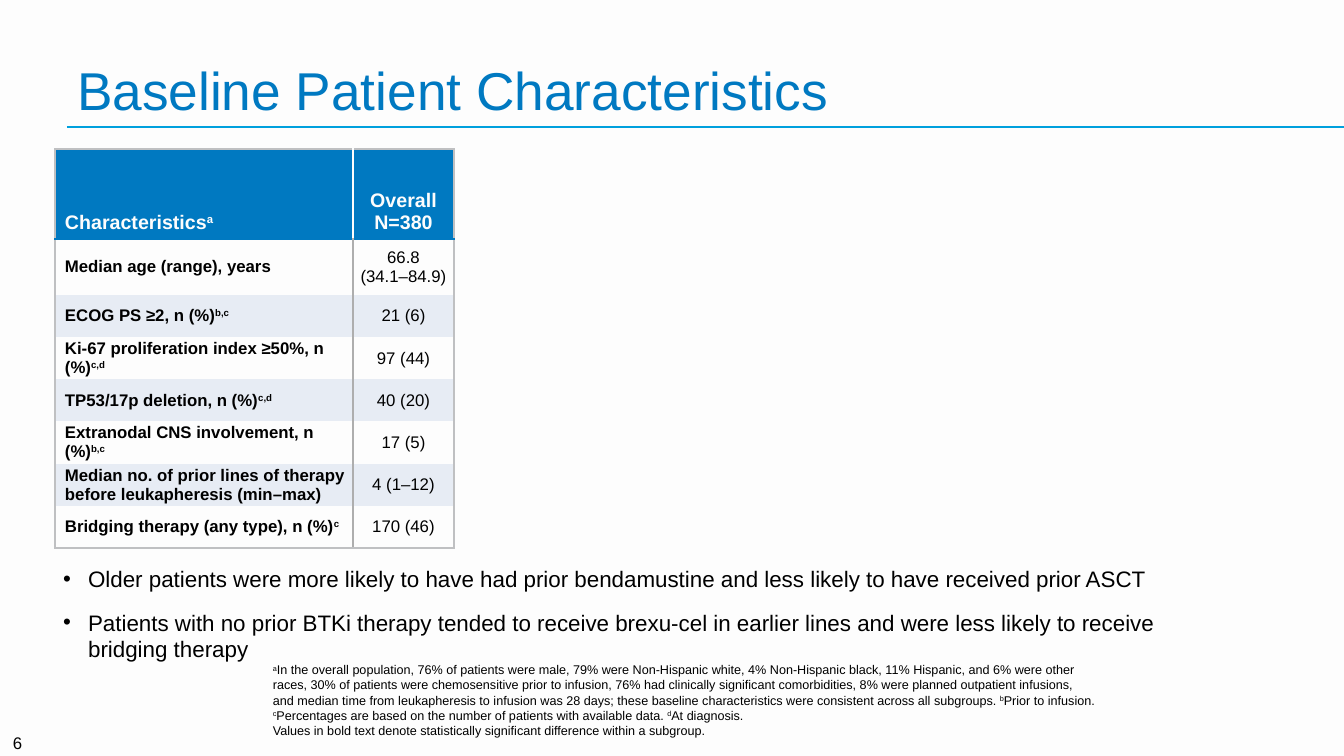
import lxml.etree
import pptx
import pptx.dml.color
import pptx.enum.shapes
import pptx.enum.text
import pptx.oxml.ns
import pptx.util

ANCHOR = pptx.enum.text.MSO_ANCHOR
ALIGN = pptx.enum.text.PP_ALIGN


def px(length):
    return pptx.util.Emu(round(length * 914400 / 100.8))


def color(value):
    return pptx.dml.color.RGBColor.from_string(value)


def add_element(parent, tag, **attributes):
    return lxml.etree.SubElement(parent, pptx.oxml.ns.qn(tag), **attributes)


class SlideBuilder:
    font = "Arial"
    blue = "0079C1"
    rule_blue = "00A0DD"
    black = "000000"
    white = "FDFDFD"
    band = "E7ECF4"
    outer_border = "BFC0C2"
    inner_border = "AEAEAE"

    def __init__(self, presentation):
        self.slide = presentation.slides.add_slide(presentation.slide_layouts[1])
        background = self.slide.background.fill
        background.solid()
        background.fore_color.rgb = color(self.white)

    def move(self, shape, left, top, width, height):
        shape.left, shape.top = px(left), px(top)
        shape.width, shape.height = px(width), px(height)

    def inset(self, holder, left, top, right, bottom):
        holder.margin_left, holder.margin_top = px(left), px(top)
        holder.margin_right, holder.margin_bottom = px(right), px(bottom)

    def add_paragraphs(self, frame, lines, size, text_color, bold=False, align=ALIGN.LEFT):
        for index, line in enumerate(lines):
            paragraph = frame.paragraphs[0] if index == 0 else frame.add_paragraph()
            paragraph.alignment = align
            paragraph.space_before = pptx.util.Pt(0)
            self.add_runs(paragraph, line)
            paragraph.font.name = self.font
            paragraph.font.size = pptx.util.Pt(size)
            paragraph.font.bold = bold
            paragraph.font.color.rgb = color(text_color)

    def add_runs(self, paragraph, line):
        for row, segment in enumerate(line.split("\n")):
            if row:
                paragraph.add_line_break()
            for index, piece in enumerate(segment.split("^")):
                if piece:
                    run = paragraph.add_run()
                    run.text = piece
                    if index % 2:
                        run._r.get_or_add_rPr().set("baseline", "30000")

    def title(self, text, *box):
        shape = self.slide.shapes.title
        self.move(shape, *box)
        frame = shape.text_frame
        frame.auto_size = pptx.enum.text.MSO_AUTO_SIZE.NONE
        frame.vertical_anchor = ANCHOR.BOTTOM
        self.add_paragraphs(frame, [text], 38, self.blue)

    def bullets(self, lines, *box):
        shape = self.slide.placeholders[1]
        self.move(shape, *box)
        frame = shape.text_frame
        frame.auto_size = pptx.enum.text.MSO_AUTO_SIZE.NONE
        frame.vertical_anchor = ANCHOR.TOP
        self.add_paragraphs(frame, lines, 16, self.black)
        for paragraph in frame.paragraphs:
            paragraph.space_after = pptx.util.Pt(12)
            properties = paragraph._p.get_or_add_pPr()
            properties.set("marL", str(px(25)))
            properties.set("indent", str(px(-25)))

    def text(self, lines, size, anchor, align, *box):
        shape = self.slide.shapes.add_textbox(*map(px, box))
        frame = shape.text_frame
        frame.word_wrap = True
        frame.vertical_anchor = anchor
        self.add_paragraphs(frame, lines, size, self.black, align=align)

    def line(self, left, top, right, bottom):
        connector = self.slide.shapes.add_connector(
            pptx.enum.shapes.MSO_CONNECTOR.STRAIGHT, *map(px, (left, top, right, bottom)))
        connector.line.color.rgb = color(self.rule_blue)
        connector.line.width = pptx.util.Pt(0.75)
        add_element(connector._element.spPr, "a:effectLst")

    def borders(self, cell, left, right, top, bottom):
        properties = cell._tc.get_or_add_tcPr()
        sides = zip(("a:lnL", "a:lnR", "a:lnT", "a:lnB"), (left, right, top, bottom))
        for tag, value in sides:
            border = add_element(properties, tag, w="12700")
            if value:
                add_element(add_element(border, "a:solidFill"), "a:srgbClr", val=value)
            else:
                add_element(border, "a:noFill")

    def table(self, rows, widths, heights, left, top):
        table = self.slide.shapes.add_table(
            len(rows), len(widths), px(left), px(top),
            px(sum(widths)), px(sum(heights))).table
        table.horz_banding = False
        for column, width in zip(table.columns, widths):
            column.width = px(width)
        for row, height in zip(table.rows, heights):
            row.height = px(height)
        for row, texts in enumerate(rows):
            for column, text in enumerate(texts):
                self.cell(table.cell(row, column), text, row, column, row == len(rows) - 1)

    def cell(self, cell, text, row, column, is_last):
        header = row == 0
        label = column == 0
        divider = self.white if header else self.inner_border
        left, right = (self.outer_border, divider) if label else (divider, self.outer_border)
        top = {0: self.outer_border, 1: self.blue}.get(row)
        bottom = self.blue if header else self.outer_border if is_last else None
        self.borders(cell, left, right, top, bottom)
        cell.fill.solid()
        fill = self.blue if header else self.white if row % 2 else self.band
        cell.fill.fore_color.rgb = color(fill)
        cell.vertical_anchor = ANCHOR.BOTTOM if header else ANCHOR.MIDDLE
        if header:
            self.inset(cell, *((10, 5, 10, 5) if label else (5, 5, 5, 5)))
        else:
            self.inset(cell, *((10, 1, 3, 1) if label else (4, 1, 4, 1)))
        self.add_paragraphs(cell.text_frame, text.split("\n"), 14 if header else 12,
                            self.white if header else self.black, header or label,
                            ALIGN.LEFT if label else ALIGN.CENTER)


CHARACTERISTICS = [
    ("Characteristics^a^", "Overall\nN=380"),
    ("Median age (range), years", "66.8\n(34.1–84.9)"),
    ("ECOG PS ≥2, n (%)^b,c^", "21 (6)"),
    ("Ki-67 proliferation index ≥50%, n (%)^c,d^", "97 (44)"),
    ("TP53/17p deletion, n (%)^c,d^", "40 (20)"),
    ("Extranodal CNS involvement, n (%)^b,c^", "17 (5)"),
    ("Median no. of prior lines of therapy before leukapheresis (min–max)", "4 (1–12)"),
    ("Bridging therapy (any type), n (%)^c^", "170 (46)"),
]
FINDINGS = [
    "Older patients were more likely to have had prior bendamustine and less likely "
    "to have received prior ASCT",
    "Patients with no prior BTKi therapy tended to receive brexu-cel in earlier lines "
    "and were less likely to receive bridging therapy",
]
FOOTNOTES = [
    "^a^In the overall population, 76% of patients were male, 79% were Non-Hispanic white, "
    "4% Non-Hispanic black, 11% Hispanic, and 6% were other races, 30% of patients were "
    "chemosensitive prior to infusion, 76% had clinically significant comorbidities, "
    "8% were planned outpatient infusions,\n"
    "and median time from leukapheresis to infusion was 28 days; these baseline "
    "characteristics were consistent across all subgroups. ^b^Prior to infusion. "
    "^c^Percentages are based on the number of patients with available data. ^d^At diagnosis.",
    "Values in bold text denote statistically significant difference within a subgroup.",
]


def main():
    presentation = pptx.Presentation()
    presentation.slide_width, presentation.slide_height = px(1344), px(756)
    builder = SlideBuilder(presentation)
    builder.line(67, 127, 1344, 127)
    builder.title("Baseline Patient Characteristics", 67, 13, 1210, 113)
    builder.text(["6"], 12, ANCHOR.MIDDLE, ALIGN.RIGHT, -35, 723, 67, 40)
    builder.text(FOOTNOTES, 9, ANCHOR.BOTTOM, ALIGN.LEFT, 263, 656, 851, 87)
    builder.bullets(FINDINGS, 53, 560, 1151, 64)
    builder.table(CHARACTERISTICS, (298, 101), (90, 56) + (42,) * 6, 55, 149)
    presentation.save("out.pptx")


if __name__ == "__main__":
    main()
